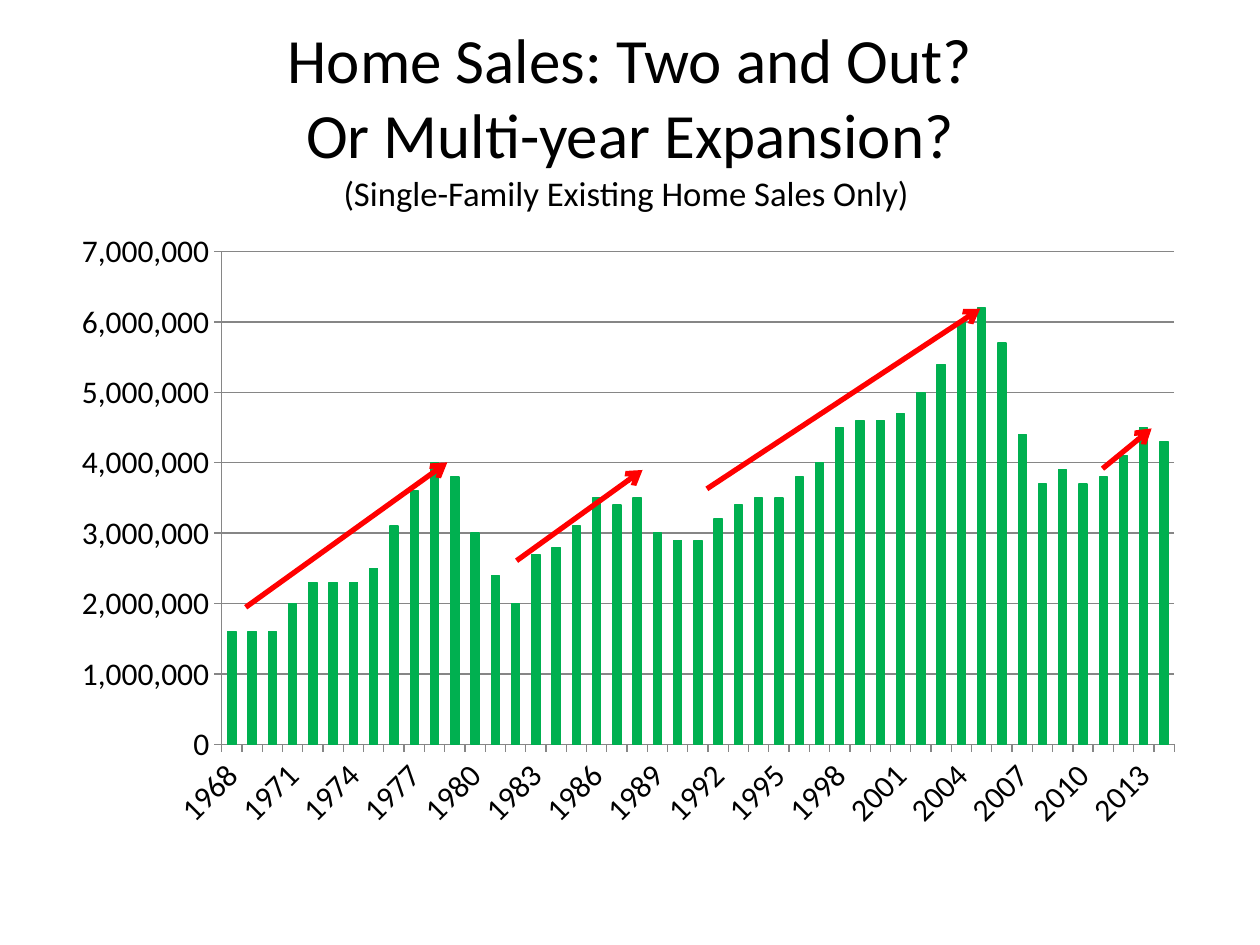
from copy import deepcopy

from lxml import etree
from pptx import Presentation
from pptx.chart.data import CategoryChartData
from pptx.dml.color import RGBColor
from pptx.enum.chart import XL_CHART_TYPE, XL_TICK_MARK
from pptx.enum.shapes import MSO_CONNECTOR
from pptx.enum.text import MSO_ANCHOR, MSO_AUTO_SIZE, PP_ALIGN
from pptx.oxml import parse_xml
from pptx.oxml.ns import nsdecls, qn
from pptx.util import Emu, Pt

EMU_PER_PX = 9144  # 100 px to the inch
FIRST_YEAR = 1968
HOME_SALES_IN_100K = [
    16, 16, 16, 20, 23, 23, 23, 25, 31, 36, 40, 38, 30, 24, 20, 27,
    28, 31, 35, 34, 35, 30, 29, 29, 32, 34, 35, 35, 38, 40, 45, 46,
    46, 47, 50, 54, 60, 62, 57, 44, 37, 39, 37, 38, 41, 45, 43,
]
EXPANSIONS = [  # start x, start y, end x, end y
    (195, 482, 355, 367),
    (410, 445, 510, 373),
    (561, 388, 778, 245),
    (875, 372, 914, 340),
]


def px(length):
    return Emu(length * EMU_PER_PX)


def color(hex_string):
    return RGBColor.from_string(hex_string)


class SlideBuilder:
    font = "Calibri"
    ink = "000000"
    bars = "00B050"
    trend = "FF0000"
    grid = "868686"

    def __init__(self, slide):
        self.slide = slide

    def style_font(self, font, size):
        font.name = self.font
        font.size = Pt(size)
        font.color.rgb = color(self.ink)

    def style_line(self, line, hex_string, width):
        line.color.rgb = color(hex_string)
        line.width = Pt(width)

    def title(self, lines, left, top, width, height):
        title = self.slide.shapes.title
        title.left, title.top = px(left), px(top)
        title.width, title.height = px(width), px(height)
        frame = title.text_frame
        frame.auto_size = MSO_AUTO_SIZE.NONE
        frame.vertical_anchor = MSO_ANCHOR.MIDDLE
        paragraph = frame.paragraphs[0]
        paragraph.alignment = PP_ALIGN.CENTER
        for index, (text, size) in enumerate(lines):
            if index:
                # The break keeps the text size of the line it ends
                paragraph.add_line_break()
                paragraph._p[-1].append(deepcopy(run._r.rPr))
            run = paragraph.add_run()
            run.text = text
            self.style_font(run.font, size)

    def column_chart(self, name, years, values, left, top, width, height):
        data = CategoryChartData(number_format="#,##0")
        data.categories = years
        data.add_series(name, values)
        chart = self.slide.shapes.add_chart(
            XL_CHART_TYPE.COLUMN_CLUSTERED,
            px(left), px(top), px(width), px(height), data).chart
        chart.has_legend = chart.has_title = False
        self.style_font(chart.font, 18)

        # Columns
        plot = chart.plots[0]
        plot.gap_width = 150
        plot.vary_by_categories = False
        series = plot.series[0]
        series.format.fill.solid()
        series.format.fill.fore_color.rgb = color(self.bars)
        self.style_line(series.format.line, self.bars, 0.75)

        # Axes
        year_axis, sales_axis = chart.category_axis, chart.value_axis
        for axis in (year_axis, sales_axis):
            axis.major_tick_mark = XL_TICK_MARK.OUTSIDE
            axis.minor_tick_mark = XL_TICK_MARK.NONE
            self.style_line(axis.format.line, self.grid, 0.75)
            self.style_font(axis.tick_labels.font, 18)
        sales_axis.minimum_scale = 0
        sales_axis.maximum_scale = 7000000
        sales_axis.major_unit = 1000000
        sales_axis.tick_labels.number_format = "#,##0"
        sales_axis.tick_labels.number_format_is_linked = False
        sales_axis.has_major_gridlines = True
        self.style_line(sales_axis.major_gridlines.format.line, self.grid, 0.75)

        # Every third year, slanted
        year_xml = year_axis._element
        year_xml.find(qn("c:txPr")).find(qn("a:bodyPr")).set("rot", "-2700000")
        year_xml.find(qn("c:noMultiLvlLbl")).addprevious(
            parse_xml(f'<c:tickLblSkip {nsdecls("c")} val="3"/>'))
        self.place_plot(chart, x=0.14, y=0.05, w=0.84, h=0.79)

    def place_plot(self, chart, **fractions):
        area = chart._chartSpace.chart.plotArea
        for old in area.findall(qn("c:layout")):
            area.remove(old)
        modes = '<c:xMode val="edge"/><c:yMode val="edge"/>'
        sizes = "".join(f'<c:{k} val="{v}"/>' for k, v in fractions.items())
        area.insert(0, parse_xml(
            f'<c:layout {nsdecls("c")}><c:manualLayout>'
            f'<c:layoutTarget val="inner"/>{modes}{sizes}'
            f'</c:manualLayout></c:layout>'))

    def arrow(self, x1, y1, x2, y2):
        arrow = self.slide.shapes.add_connector(
            MSO_CONNECTOR.STRAIGHT, px(x1), px(y1), px(x2), px(y2))
        self.style_line(arrow.line, self.trend, 3)
        etree.SubElement(arrow.line._ln, qn("a:tailEnd"), type="arrow")
        etree.SubElement(arrow._element.spPr, qn("a:effectLst"))


def main():
    deck = Presentation()
    deck.slide_width, deck.slide_height = px(1000), px(750)
    builder = SlideBuilder(deck.slides.add_slide(deck.slide_layouts[5]))

    # Heading
    builder.title([
        ("Home Sales: Two and Out?", 36),
        ("Or Multi-year Expansion?", 36),
        ("(Single-Family Existing Home Sales Only) ", 19.8),
    ], 50, 30, 900, 125)

    # Yearly sales
    years = [str(FIRST_YEAR + i) for i in range(len(HOME_SALES_IN_100K))]
    sales = [value * 100000 for value in HOME_SALES_IN_100K]
    builder.column_chart("Series 1", years, sales, 50, 175, 900, 495)

    # Expansion trends
    for expansion in EXPANSIONS:
        builder.arrow(*expansion)

    deck.save("out.pptx")


if __name__ == "__main__":
    main()
